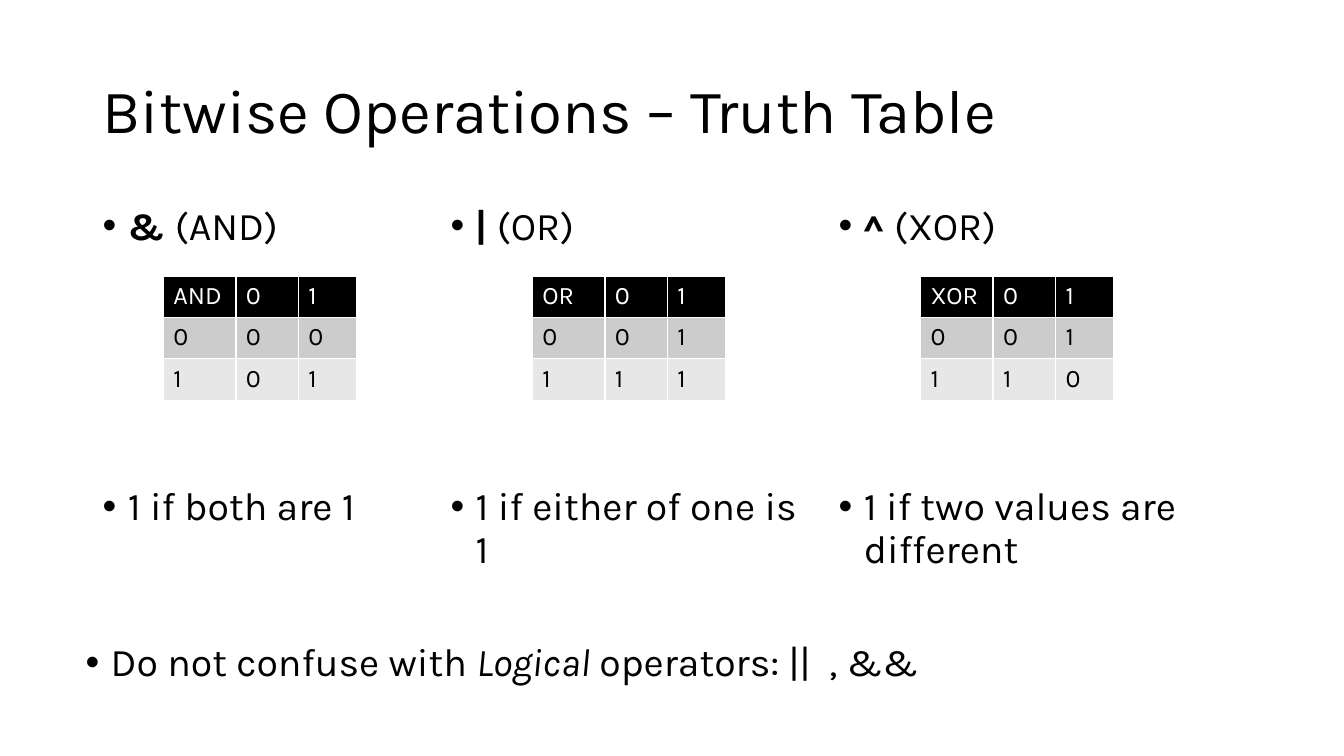
from dataclasses import dataclass
from typing import Callable

from lxml import etree
from pptx import Presentation
from pptx.dml.color import RGBColor
from pptx.enum.text import MSO_ANCHOR
from pptx.oxml.ns import qn
from pptx.slide import Slide
from pptx.table import _Cell
from pptx.text.text import TextFrame, _Paragraph
from pptx.util import Emu, Pt

PX = 9144  # 100 px to the inch
MIDDLE = MSO_ANCHOR.MIDDLE
FONT = "Karla"
BLACK = RGBColor(0x00, 0x00, 0x00)
WHITE = RGBColor(0xFF, 0xFF, 0xFF)
ROW_FILLS = (BLACK, RGBColor(0xCC, 0xCC, 0xCC), RGBColor(0xE7, 0xE7, 0xE7))
TABLE_TOP = 274
COLUMN_WIDTHS = (72, 62, 58)
ROW_HEIGHT = 41
RULE_GAP = Pt(170)  # room for the truth table between heading and rule


@dataclass(frozen=True)
class Box:
    left: int
    top: int
    width: int
    height: int


@dataclass(frozen=True)
class Operation:
    symbol: str
    name: str
    rule: str
    apply: Callable[[int, int], int]
    box: Box
    table_left: int


OPERATIONS = (
    Operation("&", "AND", "1 if both are 1", lambda a, b: a & b,
              Box(92, 200, 333, 476), 162),
    Operation("|", "OR", "1 if either of one is 1", lambda a, b: a | b,
              Box(437, 200, 374, 476), 528),
    Operation("^", "XOR", "1 if two values are different", lambda a, b: a ^ b,
              Box(822, 200, 374, 393), 913),
)


def px(length: int) -> Emu:
    return Emu(length * PX)


def add_text_frame(slide: Slide, box: Box) -> TextFrame:
    shape = slide.shapes.add_textbox(
        px(box.left), px(box.top), px(box.width), px(box.height))
    shape.text_frame.word_wrap = True
    return shape.text_frame


def style_paragraph(paragraph: _Paragraph, size: int) -> None:
    paragraph.line_spacing = 0.9
    paragraph.font.name = FONT
    paragraph.font.size = Pt(size)
    paragraph.font.color.rgb = BLACK


def style_bullet(paragraph: _Paragraph) -> None:
    properties = paragraph._p.get_or_add_pPr()
    properties.set("marL", str(px(25)))
    properties.set("indent", str(px(-25)))
    etree.SubElement(properties, qn("a:buFont"), typeface="Arial")
    etree.SubElement(properties, qn("a:buChar"), char="•")
    style_paragraph(paragraph, 28)


def add_run(paragraph: _Paragraph, text: str, bold: bool = False,
            italic: bool = False) -> None:
    run = paragraph.add_run()
    run.text = text
    run.font.bold = bold
    run.font.italic = italic


def style_cell(cell: _Cell, row: int) -> None:
    properties = cell._tc.get_or_add_tcPr()
    for side in ("a:lnL", "a:lnR", "a:lnT", "a:lnB"):
        line = etree.SubElement(properties, qn(side), w=str(Pt(1)))
        fill = etree.SubElement(line, qn("a:solidFill"))
        etree.SubElement(fill, qn("a:srgbClr"), val=str(WHITE))
    cell.fill.solid()
    cell.fill.fore_color.rgb = ROW_FILLS[row]
    font = cell.text_frame.paragraphs[0].font
    font.name = FONT
    font.size = Pt(18)
    font.bold = False
    font.color.rgb = WHITE if row == 0 else BLACK


def add_truth_table(slide: Slide, operation: Operation) -> None:
    rows = [(operation.name, 0, 1)]
    rows += [(a, operation.apply(a, 0), operation.apply(a, 1)) for a in (0, 1)]
    table = slide.shapes.add_table(
        len(rows), len(COLUMN_WIDTHS), px(operation.table_left), px(TABLE_TOP),
        px(sum(COLUMN_WIDTHS)), px(ROW_HEIGHT * len(rows))).table
    table.horz_banding = False
    for column, width in zip(table.columns, COLUMN_WIDTHS):
        column.width = px(width)
    for row, values in enumerate(rows):
        table.rows[row].height = px(ROW_HEIGHT)
        for column, value in enumerate(values):
            cell = table.cell(row, column)
            cell.text = str(value)
            style_cell(cell, row)


def add_operation(slide: Slide, operation: Operation) -> None:
    text_frame = add_text_frame(slide, operation.box)
    heading = text_frame.paragraphs[0]
    style_bullet(heading)
    add_run(heading, operation.symbol, bold=True)
    add_run(heading, f" ({operation.name})")
    rule = text_frame.add_paragraph()
    style_bullet(rule)
    rule.space_before = RULE_GAP
    add_run(rule, operation.rule)
    add_truth_table(slide, operation)


def main() -> None:
    presentation = Presentation()
    presentation.slide_width = px(1333)
    presentation.slide_height = px(750)
    slide = presentation.slides.add_slide(presentation.slide_layouts[6])

    # Title
    title_frame = add_text_frame(slide, Box(92, 40, 1150, 145))
    title_frame.vertical_anchor = MIDDLE
    title = title_frame.paragraphs[0]
    title.text = "Bitwise Operations – Truth Table"
    style_paragraph(title, 44)

    # One column per operation
    for operation in OPERATIONS:
        add_operation(slide, operation)

    # Closing note
    note = add_text_frame(slide, Box(75, 633, 1160, 77)).paragraphs[0]
    style_bullet(note)
    add_run(note, "Do not confuse with ")
    add_run(note, "Logical", italic=True)
    add_run(note, " operators: ||  , &&")

    presentation.save("out.pptx")


if __name__ == "__main__":
    main()
